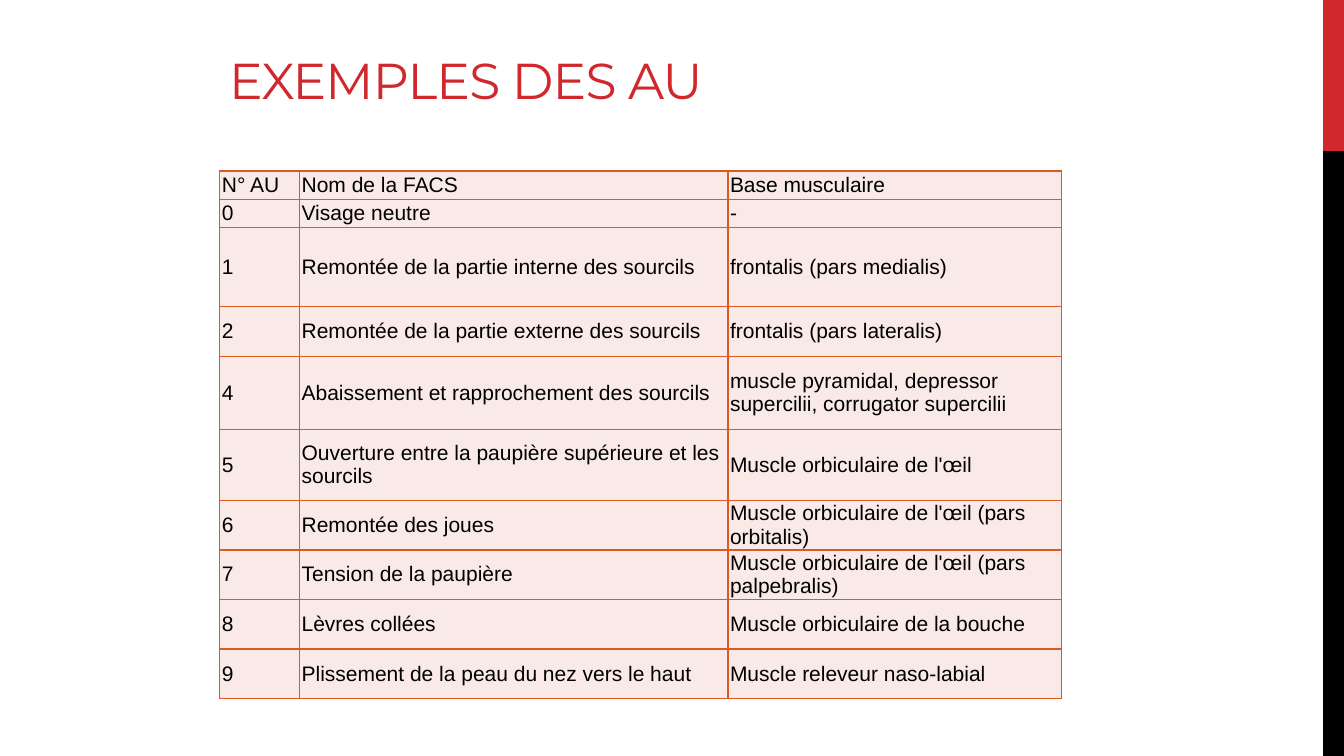
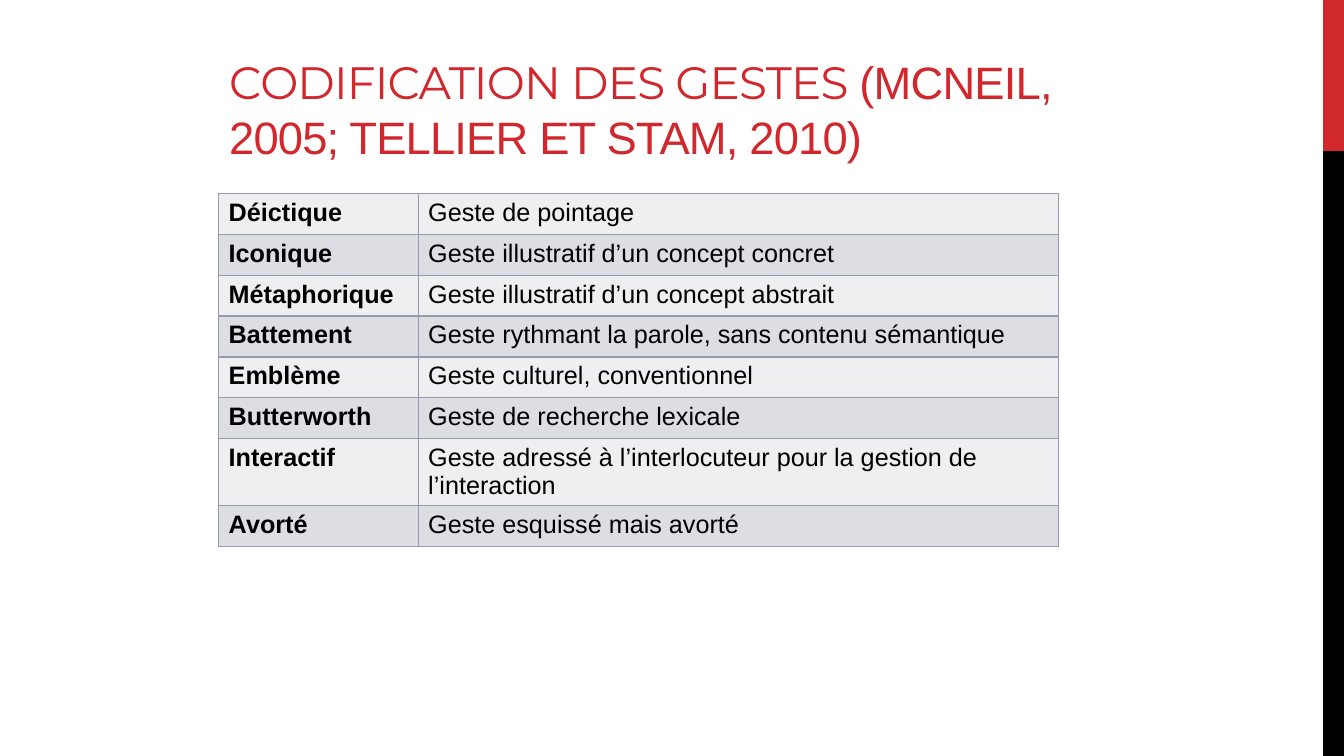
from lxml.etree import SubElement
from pptx import Presentation
from pptx.dml.color import RGBColor
from pptx.enum.shapes import MSO_SHAPE
from pptx.enum.text import MSO_ANCHOR, MSO_AUTO_SIZE, PP_ALIGN
from pptx.oxml.ns import qn
from pptx.util import Pt

COLORS = {
    "accent": "D1282E",
    "black": "000000",
    "orange": "DC5924",
    "rose": "F9EAE8",
    "slate": "989AAC",
    "light": "EFEFF1",
    "dark": "DDDEE3",
}
SLIDE_WIDTH, SLIDE_HEIGHT = 960, 540
BAND_WIDTH, BAND_SPLIT = 15, 108
TITLE_FONT, BODY_FONT = "Montserrat", "Arial"
TITLE_FRAME = {
    "vertical_anchor": MSO_ANCHOR.BOTTOM,
    "auto_size": MSO_AUTO_SIZE.NONE,
    "word_wrap": True,
}

ACTION_UNITS = [
    ("N° AU", "Nom de la FACS", "Base musculaire"),
    ("0", "Visage neutre", "-"),
    ("1", "Remontée de la partie interne des sourcils", "frontalis (pars medialis)"),
    ("2", "Remontée de la partie externe des sourcils", "frontalis (pars lateralis)"),
    ("4", "Abaissement et rapprochement des sourcils",
     "muscle pyramidal, depressor supercilii, corrugator supercilii"),
    ("5", "Ouverture entre la paupière supérieure et les sourcils",
     "Muscle orbiculaire de l'œil"),
    ("6", "Remontée des joues", "Muscle orbiculaire de l'œil (pars orbitalis)"),
    ("7", "Tension de la paupière", "Muscle orbiculaire de l'œil (pars palpebralis)"),
    ("8", "Lèvres collées", "Muscle orbiculaire de la bouche"),
    ("9", "Plissement de la peau du nez vers le haut", "Muscle releveur naso-labial"),
]
ACTION_UNIT_STYLE = {
    "size": 15,
    "border": "orange",
    "fills": ["rose"],
    "bold_columns": 0,
    "cell": {
        "vertical_anchor": MSO_ANCHOR.MIDDLE,
        "margin_left": Pt(1.5),
        "margin_right": Pt(1.5),
        "margin_top": Pt(0.7),
        "margin_bottom": Pt(0.7),
    },
}

GESTURES = [
    ("Déictique", "Geste de pointage"),
    ("Iconique", "Geste illustratif d’un concept concret"),
    ("Métaphorique", "Geste illustratif d’un concept abstrait"),
    ("Battement", "Geste rythmant la parole, sans contenu sémantique"),
    ("Emblème", "Geste culturel, conventionnel"),
    ("Butterworth", "Geste de recherche lexicale"),
    ("Interactif", "Geste adressé à l’interlocuteur pour la gestion de l’interaction"),
    ("Avorté", "Geste esquissé mais avorté"),
]
GESTURE_STYLE = {
    "size": 18,
    "border": "slate",
    "fills": ["light", "dark"],
    "bold_columns": 1,
    "cell": {"vertical_anchor": MSO_ANCHOR.TOP},
}


def rgb(name):
    return RGBColor.from_string(COLORS[name])


def set_all(target, values):
    for attribute, value in values.items():
        setattr(target, attribute, value)


def add_run(paragraph, text, color, **font):
    run = paragraph.add_run()
    run.text = text
    set_all(run.font, font)
    run.font.color.rgb = rgb(color)
    return run


def add_side_bands(slide):
    bands = [("accent", 0, BAND_SPLIT), ("black", BAND_SPLIT, SLIDE_HEIGHT - BAND_SPLIT)]
    for color, top, height in bands:
        band = slide.shapes.add_shape(
            MSO_SHAPE.RECTANGLE, Pt(SLIDE_WIDTH - BAND_WIDTH), Pt(top),
            Pt(BAND_WIDTH), Pt(height))
        band.shadow.inherit = False
        band.fill.solid()
        band.fill.fore_color.rgb = rgb(color)
        band.line.fill.background()


def format_title(title, box, runs, size, bottom_margin=3.6):
    """Fill the title placeholder; runs are (text, font name) pairs."""
    names = ("left", "top", "width", "height")
    set_all(title, dict(zip(names, map(Pt, box))))
    set_all(title.text_frame, TITLE_FRAME)
    title.text_frame.margin_bottom = Pt(bottom_margin)
    paragraph = title.text_frame.paragraphs[0]
    paragraph.alignment = PP_ALIGN.LEFT
    for text, font in runs:
        run = add_run(paragraph, text, "accent", name=font, size=Pt(size))
        run.font._element.set("spc", "-60")


def add_borders(cell, color):
    properties = cell._tc.get_or_add_tcPr()
    for side in ("lnL", "lnR", "lnT", "lnB"):
        line = SubElement(properties, qn(f"a:{side}"), w=str(Pt(1)))
        fill = SubElement(line, qn("a:solidFill"))
        SubElement(fill, qn("a:srgbClr"), val=COLORS[color])


def add_grid(slide, left, top, widths, heights, rows, style):
    table = slide.shapes.add_table(
        len(rows), len(widths), Pt(left), Pt(top),
        Pt(sum(widths)), Pt(sum(heights))).table
    set_all(table, {"first_row": False, "horz_banding": False})
    for column, width in zip(table.columns, widths):
        column.width = Pt(width)
    for r, (texts, height) in enumerate(zip(rows, heights)):
        table.rows[r].height = Pt(height)
        for c, text in enumerate(texts):
            cell = table.cell(r, c)
            set_all(cell, style["cell"])
            add_borders(cell, style["border"])
            cell.fill.solid()
            cell.fill.fore_color.rgb = rgb(style["fills"][r % len(style["fills"])])
            add_run(cell.text_frame.paragraphs[0], text, "black", name=BODY_FONT,
                    size=Pt(style["size"]), bold=c < style["bold_columns"])


def add_titled_slide(deck):
    slide = deck.slides.add_slide(deck.slide_layouts[5])
    add_side_bands(slide)
    return slide


def main():
    deck = Presentation()
    set_all(deck, {"slide_width": Pt(SLIDE_WIDTH), "slide_height": Pt(SLIDE_HEIGHT)})

    units = add_titled_slide(deck)
    format_title(units.shapes.title, (156.5, 14.4, 602, 108),
                 [("EXEMPLES DES AU", TITLE_FONT)], 36, bottom_margin=44)
    add_grid(units, 157, 122.2, [57, 306, 238],
             [20.2, 20.2, 56.5, 35.4, 52.3, 50.7] + [35.4] * 4,
             ACTION_UNITS, ACTION_UNIT_STYLE)

    gestures = add_titled_slide(deck)
    format_title(gestures.shapes.title, (156.5, 12.2, 613.5, 108),
                 [("CODIFICATION DES GESTES ", TITLE_FONT),
                  ("(MCNEIL, 2005; TELLIER ET STAM, 2010)", BODY_FONT)], 32.4)
    add_grid(gestures, 156.2, 138.2, [142.5, 457.5], [29.2] * len(GESTURES),
             GESTURES, GESTURE_STYLE)

    deck.save("out.pptx")


if __name__ == "__main__":
    main()
